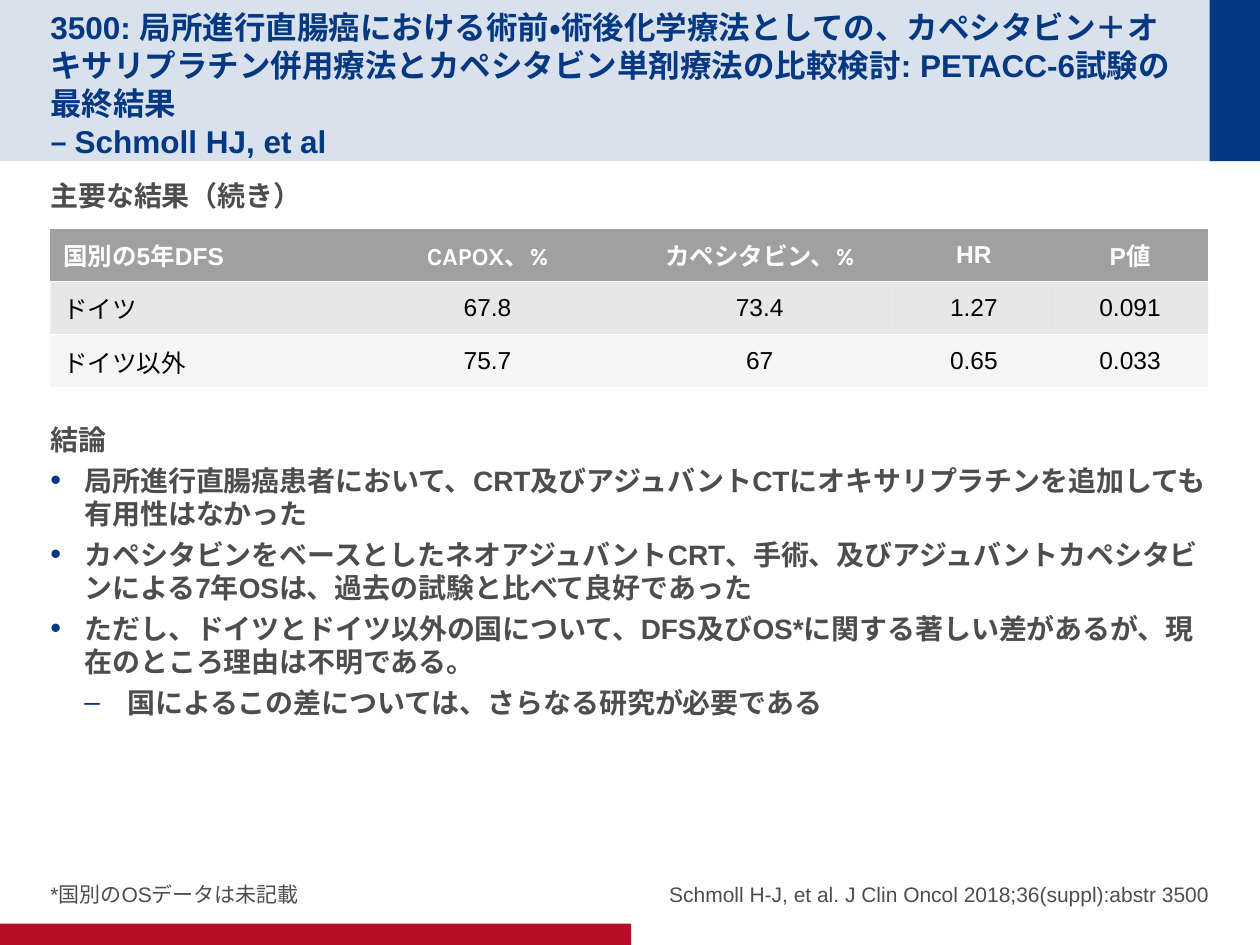
from dataclasses import dataclass
from lxml.etree import SubElement as Sub
from pptx import Presentation
from pptx.dml.color import RGBColor as Rgb
from pptx.enum.lang import MSO_LANGUAGE_ID as Lang
from pptx.enum.shapes import MSO_SHAPE as Kind
from pptx.enum.text import MSO_ANCHOR as Anchor, MSO_AUTO_SIZE as Auto, PP_ALIGN as Align
from pptx.oxml.ns import qn
from pptx.util import Inches, Pt


@dataclass(frozen=True)
class Theme:
    blue: str = "043882"
    red: str = "B60D27"
    gray: str = "A0A0A0"
    ink: str = "4D4D4D"
    white: str = "FFFFFF"
    black: str = "000000"
    face: str = "Arial"
    alt: str = "Karla"
    head: int = 18
    body: int = 16
    cell: int = 14
    note: int = 12


def assign(item, vals):
    for name, val in vals.items():
        setattr(item, name, val)


class Deck:
    def __init__(self, theme):
        self.theme = theme
        self.prs = Presentation()
        assign(self.prs, {"slide_width": Inches(10), "slide_height": Inches(7.5)})
        self.slide = self.prs.slides.add_slide(self.prs.slide_layouts[4])
        self.back = 2  # next place behind the placeholders

    def style(self, font, size, color, bold=False, face=None):
        assign(font, {"size": Pt(size), "bold": bold, "name": face or self.theme.face,
                      "language_id": Lang.JAPANESE})
        font.color.rgb = Rgb.from_string(color)

    def paint(self, fill, color, alpha=100):
        fill.solid()
        fill.fore_color.rgb = Rgb.from_string(color)
        if alpha < 100:
            # The colour element is reached through the fill's parent
            for clr in fill._xPr.find(qn("a:solidFill")):
                Sub(clr, qn("a:alpha"), val=str(alpha * 1000))

    def bar(self, box, color, alpha=100):
        shape = self.slide.shapes.add_shape(Kind.RECTANGLE, *map(Inches, box))
        shape.shadow.inherit = False
        shape.line.fill.background()
        self.paint(shape.fill, color, alpha)
        self.slide.shapes._spTree.insert(self.back, shape._element)
        self.back += 1

    def bullet(self, para, mark, left, hang, size):
        props = para._p.get_or_add_pPr()
        props.set("marL", str(Inches(left)))
        props.set("indent", str(Inches(-hang)))
        if not mark:
            Sub(props, qn("a:buNone"))
            return
        Sub(Sub(props, qn("a:buClr")), qn("a:srgbClr"), val=self.theme.blue)
        Sub(props, qn("a:buSzPct"), val=str(size * 1000))
        Sub(props, qn("a:buFont"), typeface=self.theme.face)
        Sub(props, qn("a:buChar"), char=mark)

    def text(self, idx, box, paras, size, color, bold=False,
             anchor=Anchor.TOP, align=Align.LEFT, pad=(0, 0), after=4):
        """Fill a placeholder; paras holds (text, level, space before)."""
        hold = next(h for h in self.slide.placeholders
                    if h.placeholder_format.idx == idx)
        assign(hold, dict(zip(("left", "top", "width", "height"), map(Inches, box))))
        frame = hold.text_frame
        assign(frame, {"margin_left": 0, "margin_right": 0,
                       "margin_top": Inches(pad[0]), "margin_bottom": Inches(pad[1]),
                       "word_wrap": True, "auto_size": Auto.NONE,
                       "vertical_anchor": anchor})
        marks = {0: ("", 0, 0, 100), 1: ("•", 0.27, 0.27, 110), 2: ("–", 0.61, 0.34, 100)}
        for num, (words, depth, before) in enumerate(paras):
            para = frame.add_paragraph() if num else frame.paragraphs[0]
            assign(para, {"text": words, "alignment": align, "level": max(depth - 1, 0),
                          "line_spacing": 1.0, "space_before": Pt(before),
                          "space_after": Pt(after)})
            self.bullet(para, *marks[depth])
            for run in para.runs:
                self.style(run.font, size, color, bold)

    def edge(self, cell, side):
        line = cell._tc.get_or_add_tcPr().makeelement(qn("a:" + side), {"w": str(Pt(1))})
        Sub(Sub(line, qn("a:solidFill")), qn("a:srgbClr"), val=self.theme.white)
        cell._tc.tcPr.insert(0, line)

    def table(self, box, cols, rows, fills, alts):
        look = self.theme
        frame = self.slide.shapes.add_table(len(rows), len(cols), *map(Inches, box))
        grid = frame.table
        # Plain style without grid lines
        grid._tbl.tblPr.find(qn("a:tableStyleId")).text = "{2D5ABB26-0587-4C30-8999-92F81FD0307C}"
        assign(grid, {"first_row": True, "horz_banding": False})
        for col, width in zip(grid.columns, cols):
            col.width = Inches(width)
        for r, row in enumerate(rows):
            for c, words in enumerate(row):
                cell = grid.cell(r, c)
                assign(cell, {"text": words, "vertical_anchor": Anchor.MIDDLE})
                self.paint(cell.fill, look.gray, fills[r])
                for side in ("lnB", "lnT"):
                    self.edge(cell, side)
                para = cell.text_frame.paragraphs[0]
                para.alignment = Align.CENTER if c else Align.LEFT
                top = r == 0
                self.style(para.runs[0].font, look.cell, look.white if top else look.black,
                           top, look.alt if top and c in alts else None)

    def tidy(self):
        for hold in list(self.slide.placeholders):
            if not hold.text_frame.text:
                hold._element.getparent().remove(hold._element)

    def save(self):
        self.tidy()
        self.prs.save("out.pptx")


def main():
    look = Theme()
    deck = Deck(look)

    # Header band and footer strip
    deck.bar((0, 0, 10, 1.28), look.blue, 15)
    deck.bar((9.6, 0, 0.4, 1.28), look.blue)
    deck.bar((0, 7.33, 5.01, 0.17), look.red)

    # Title
    title = ("3500: 局所進行直腸癌における術前・術後化学療法としての、カペシタビン＋"
             "オキサリプラチン併用療法とカペシタビン単剤療法の比較検討: "
             "PETACC-6試験の最終結果 \v– Schmoll HJ, et al")
    deck.text(0, (0.4, 0.2, 9.01, 0.88), [(title, 0, 0)], look.head, look.blue, True,
              Anchor.MIDDLE, pad=(0.05, 0), after=0)

    # Results heading and conclusions, with room for the table between
    body = [
        ("主要な結果（続き）", 0, 0),
        ("結論", 0, 116),
        ("局所進行直腸癌患者において、CRT及びアジュバントCTにオキサリプラチンを追加しても有用性はなかった", 1, 0),
        ("カペシタビンをベースとしたネオアジュバントCRT、手術、及びアジュバントカペシタビンによる"
         "7年OSは、過去の試験と比べて良好であった", 1, 0),
        ("ただし、ドイツとドイツ以外の国について、DFS及びOS*に関する著しい差があるが、"
         "現在のところ理由は不明である。", 1, 0),
        ("国によるこの差については、さらなる研究が必要である", 2, 0),
    ]
    deck.text(1, (0.4, 1.37, 9.2, 5.19), body, look.body, look.ink, True, pad=(0.05, 0.05))

    # Footnote and citation
    deck.text(2, (0.4, 6.67, 4.52, 0.53), [("*国別のOSデータは未記載", 0, 0)],
              look.note, look.ink, anchor=Anchor.BOTTOM)
    deck.text(3, (4.83, 6.67, 4.77, 0.53),
              [("Schmoll H-J, et al. J Clin Oncol 2018;36(suppl):abstr 3500", 0, 0)],
              look.note, look.ink, anchor=Anchor.BOTTOM, align=Align.RIGHT)

    # Survival by country
    rows = [("国別の5年DFS", "CAPOX、%", "カペシタビン、%", "HR", "P値"),
            ("ドイツ", "67.8", "73.4", "1.27", "0.091"),
            ("ドイツ以外", "75.7", "67", "0.65", "0.033")]
    deck.table((0.4, 1.81, 9.2, 1.27), (2.39, 2.16, 2.16, 1.24, 1.24), rows,
               (100, 25, 10), (1, 2))
    deck.save()


if __name__ == "__main__":
    main()
